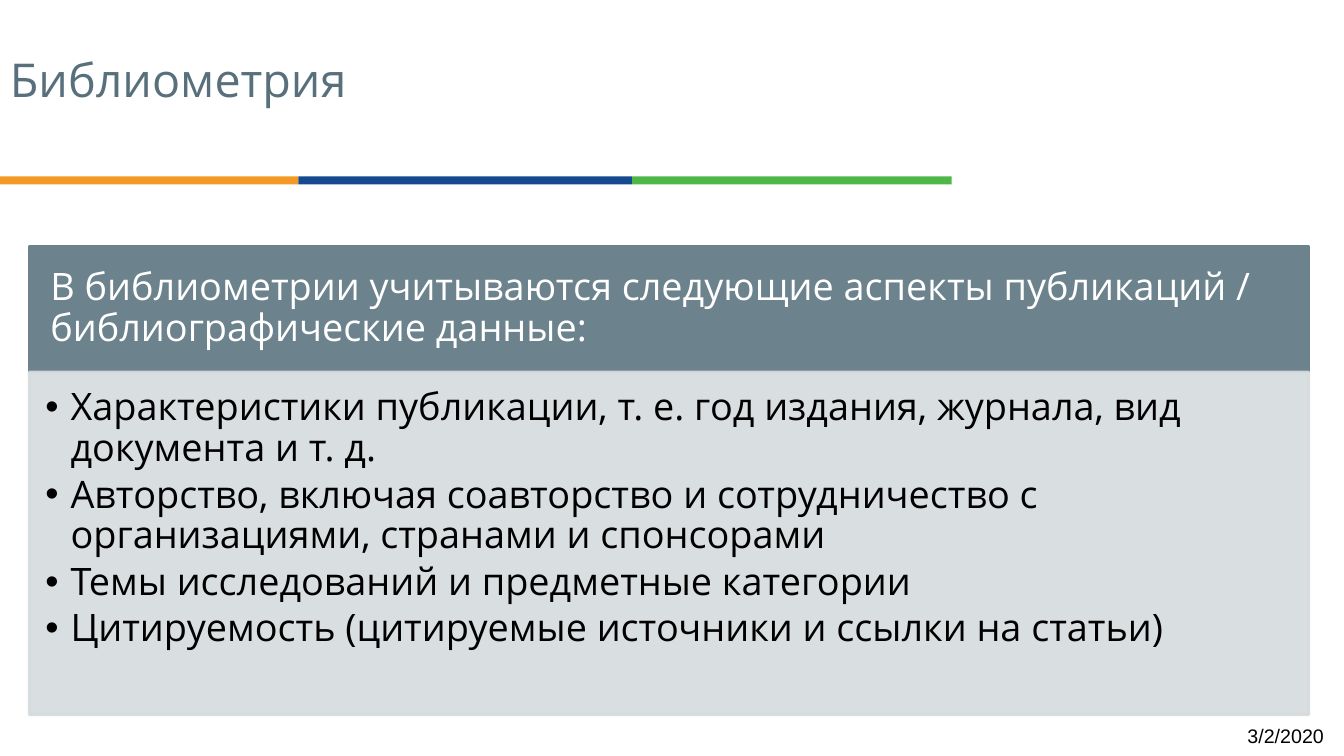
from dataclasses import dataclass
from lxml.etree import SubElement
from pptx import Presentation
from pptx.dml.color import RGBColor
from pptx.enum.shapes import MSO_SHAPE
from pptx.enum.text import MSO_ANCHOR, PP_ALIGN
from pptx.oxml.ns import qn
from pptx.util import Inches, Pt


@dataclass(frozen=True)
class Theme:
    sans: str = "Open Sans"
    plain: str = "Arial"
    title: str = "586F7C"
    head: str = "6C828C"
    body: str = "D5DBDD"
    black: str = "000000"
    white: str = "FFFFFF"
    bars: tuple = (("F49925", 2.96), ("154A90", 3.31), ("4EB748", 3.17))
    big: float = 33.3
    text: float = 27
    small: float = 14


LOOK = Theme()
WIDE, HIGH = 13.33, 7.5
POINTS = (
    "Характеристики публикации, т. е. год издания, журнала, вид документа и т. д.",
    "Авторство, включая соавторство и сотрудничество с организациями, странами и спонсорами",
    "Темы исследований и предметные категории",
    "Цитируемость (цитируемые источники и ссылки на статьи)",
)


def add_rect(slide, box, fill, line=None):
    rect = slide.shapes.add_shape(MSO_SHAPE.RECTANGLE, *map(Inches, box))
    rect.shadow.inherit = False
    rect.fill.solid()
    rect.fill.fore_color.rgb = RGBColor.from_string(fill)
    if line:
        rect.line.color.rgb = RGBColor.from_string(line)
        rect.line.width = Pt(2)
    else:
        rect.line.fill.background()
    return rect


def add_label(slide, box):
    return slide.shapes.add_textbox(*map(Inches, box))


def set_frame(shape, pads, anchor):
    frame = shape.text_frame
    frame.word_wrap = True
    frame.vertical_anchor = anchor
    (frame.margin_left, frame.margin_top,
     frame.margin_right, frame.margin_bottom) = map(Inches, pads)
    return frame


def add_run(para, text, size, color, font=LOOK.sans, align=PP_ALIGN.LEFT, space=0.9):
    para.alignment = align
    para.line_spacing = space
    run = para.add_run()
    run.text = text
    run.font.name = font
    run.font.size = Pt(size)
    run.font.color.rgb = RGBColor.from_string(color)


def set_bullet(para):
    props = para._p.get_or_add_pPr()
    props.set("marL", str(Inches(0.25)))
    props.set("indent", str(-Inches(0.25)))
    tint = SubElement(props, qn("a:buClr"))
    SubElement(tint, qn("a:srgbClr"), val=LOOK.black)
    SubElement(props, qn("a:buFont"), typeface=LOOK.plain)
    SubElement(props, qn("a:buChar"), char="•")


def fade(shape, share):
    for color in shape._element.spPr.iter(qn("a:srgbClr")):
        SubElement(color, qn("a:alpha"), val=str(share * 1000))


def draw_title(slide, box):
    frame = set_frame(add_label(slide, box), (0.1, 0.05, 0.1, 0.05), MSO_ANCHOR.TOP)
    add_run(frame.paragraphs[0], "Библиометрия", LOOK.big, LOOK.title)


def draw_bars(slide, left, top, high):
    for color, wide in LOOK.bars:
        add_rect(slide, (left, top, wide, high), color)
        left += wide


def draw_panel(slide, box, split):
    left, top, wide, high = box
    head = add_rect(slide, (left, top, wide, split), LOOK.head, LOOK.head)
    frame = set_frame(head, (0.21, 0.12, 0.21, 0.12), MSO_ANCHOR.MIDDLE)
    add_run(frame.paragraphs[0],
            "В библиометрии учитываются следующие аспекты публикаций / библиографические данные:",
            LOOK.text, LOOK.white)
    body = add_rect(slide, (left, top + split, wide, high - split), LOOK.body, LOOK.body)
    fade(body, 90)
    frame = set_frame(body, (0.16, 0.16, 0.21, 0.24), MSO_ANCHOR.TOP)
    for i, point in enumerate(POINTS):
        para = frame.add_paragraph() if i else frame.paragraphs[0]
        set_bullet(para)
        if i:
            para.space_before = Pt(4)
        add_run(para, point, LOOK.text, LOOK.black)


def draw_date(slide, box):
    frame = set_frame(add_label(slide, box), (0.1, 0.05, 0.1, 0.05), MSO_ANCHOR.MIDDLE)
    add_run(frame.paragraphs[0], "3/2/2020", LOOK.small, LOOK.black,
            LOOK.plain, PP_ALIGN.RIGHT, 1.0)


def main():
    deck = Presentation()
    deck.slide_width, deck.slide_height = Inches(WIDE), Inches(HIGH)
    slide = deck.slides.add_slide(deck.slide_layouts[6])
    draw_bars(slide, 0, 1.75, 0.08)
    draw_title(slide, (0, 0.52, 8.97, 1.18))
    draw_date(slide, (WIDE - 3.1, HIGH - 0.4, 3, 0.4))
    draw_panel(slide, (0.29, 2.44, 12.69, 4.65), 1.25)
    deck.save("out.pptx")


if __name__ == "__main__":
    main()
